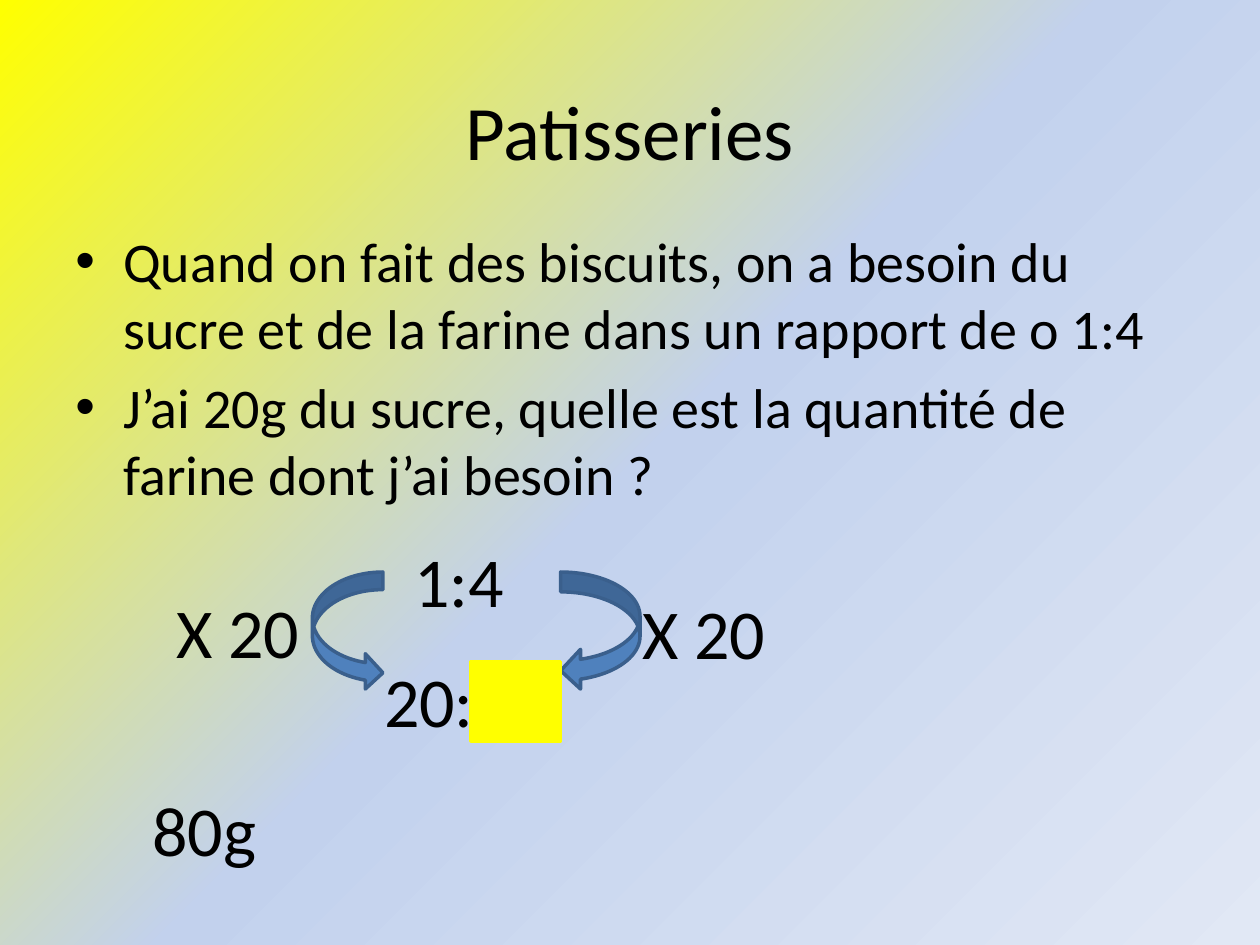
import copy

import lxml.etree
import pptx
import pptx.dml.color
import pptx.enum.shapes
import pptx.enum.text
import pptx.oxml.ns
import pptx.util

Inches = pptx.util.Inches
Pt = pptx.util.Pt
qn = pptx.oxml.ns.qn
SHAPES = pptx.enum.shapes.MSO_SHAPE
ALIGN = pptx.enum.text.PP_ALIGN
ANCHOR = pptx.enum.text.MSO_ANCHOR


def color(value):
    return pptx.dml.color.RGBColor.from_string(value)


def place(shape, left, top, width, height):
    shape.left, shape.top = Inches(left), Inches(top)
    shape.width, shape.height = Inches(width), Inches(height)


def write(frame, lines, size=40, font="Calibri", fill="000000",
          align=ALIGN.LEFT, anchor=ANCHOR.TOP, before=0, bullet=None):
    frame.word_wrap = True
    frame.vertical_anchor = anchor
    for number, line in enumerate(lines):
        para = frame.paragraphs[0] if number == 0 else frame.add_paragraph()
        para.alignment = align
        para.space_before = Pt(before)
        span = para.add_run()
        span.text = line
        span.font.name = font
        span.font.size = Pt(size)
        span.font.color.rgb = color(fill)
        if bullet:
            add_bullet(para, bullet)


def add_bullet(para, character, indent=0.38):
    properties = para._p.get_or_add_pPr()
    properties.set("marL", str(Inches(indent)))
    properties.set("indent", str(-Inches(indent)))
    lxml.etree.SubElement(properties, qn("a:buFont")).set("typeface", "Arial")
    lxml.etree.SubElement(properties, qn("a:buChar")).set("char", character)


class LessonSlide:
    blue = "4F81BD"
    dark_blue = "3A5F8C"
    yellow = "FFFF00"
    gradient = [(0, yellow), (0.5, "C2D1ED"), (1, "E1E8F5")]

    def __init__(self, deck):
        self.page = deck.slides.add_slide(deck.slide_layouts[5])

    def background(self):
        fill = self.page.background.fill
        fill.gradient()
        fill.gradient_angle = 315
        first = fill.gradient_stops[0]._gs
        first.addnext(copy.deepcopy(first))
        for stop, (position, value) in zip(fill.gradient_stops, self.gradient):
            stop.position = position
            stop.color.rgb = color(value)

    def title(self, text):
        box = self.page.shapes.title
        place(box, 0.5, 0.44, 9, 1.18)
        write(box.text_frame, [text], size=44, align=ALIGN.CENTER,
              anchor=ANCHOR.MIDDLE)

    def text(self, lines, left, top, width=2.28, height=0.77, **style):
        box = self.page.shapes.add_textbox(
            Inches(left), Inches(top), Inches(width), Inches(height))
        write(box.text_frame, lines, **style)

    def shape(self, kind, left, top, width, height, fill, line, mirrored=False):
        shape = self.page.shapes.add_shape(
            kind, Inches(left), Inches(top), Inches(width), Inches(height))
        shape.shadow.inherit = False
        shape.fill.solid()
        shape.fill.fore_color.rgb = color(fill)
        shape.line.color.rgb = color(line)
        shape.line.width = Pt(2)
        if mirrored:
            shape._element.spPr.xfrm.set("flipH", "1")

    def arrow(self, left, width, mirrored=False):
        self.shape(SHAPES.CURVED_LEFT_ARROW, left, 4.54, width, 0.94,
                   self.blue, self.dark_blue, mirrored)

    def answer_space(self, left, top, width, height):
        self.shape(SHAPES.RECTANGLE, left, top, width, height,
                   self.yellow, self.yellow)


def main():
    deck = pptx.Presentation()
    deck.slide_width, deck.slide_height = Inches(10), Inches(7.5)
    slide = LessonSlide(deck)
    slide.background()
    slide.title("Patisseries")
    slide.text(
        ["Quand on fait des biscuits, on a besoin du sucre et de la farine "
         "dans un rapport de o 1:4",
         "J’ai 20g du sucre, quelle est la quantité de farine dont j’ai besoin ?"],
        0.5, 1.75, 9, 4.95, size=32, before=6.4, bullet="•")
    slide.text(["1:4"], 3.19, 4.22)
    slide.text(["20:"], 2.95, 5.17)
    slide.arrow(4.45, 0.63)
    slide.arrow(2.48, 0.56, mirrored=True)
    for left, top in [(1.3, 4.62), (5, 4.63)]:
        slide.text(["X 20"], left, top)
    slide.answer_space(3.74, 5.25, 0.71, 0.63)
    slide.text(["80g"], 1.11, 6.19, width=5.93)
    deck.save("out.pptx")


if __name__ == "__main__":
    main()
